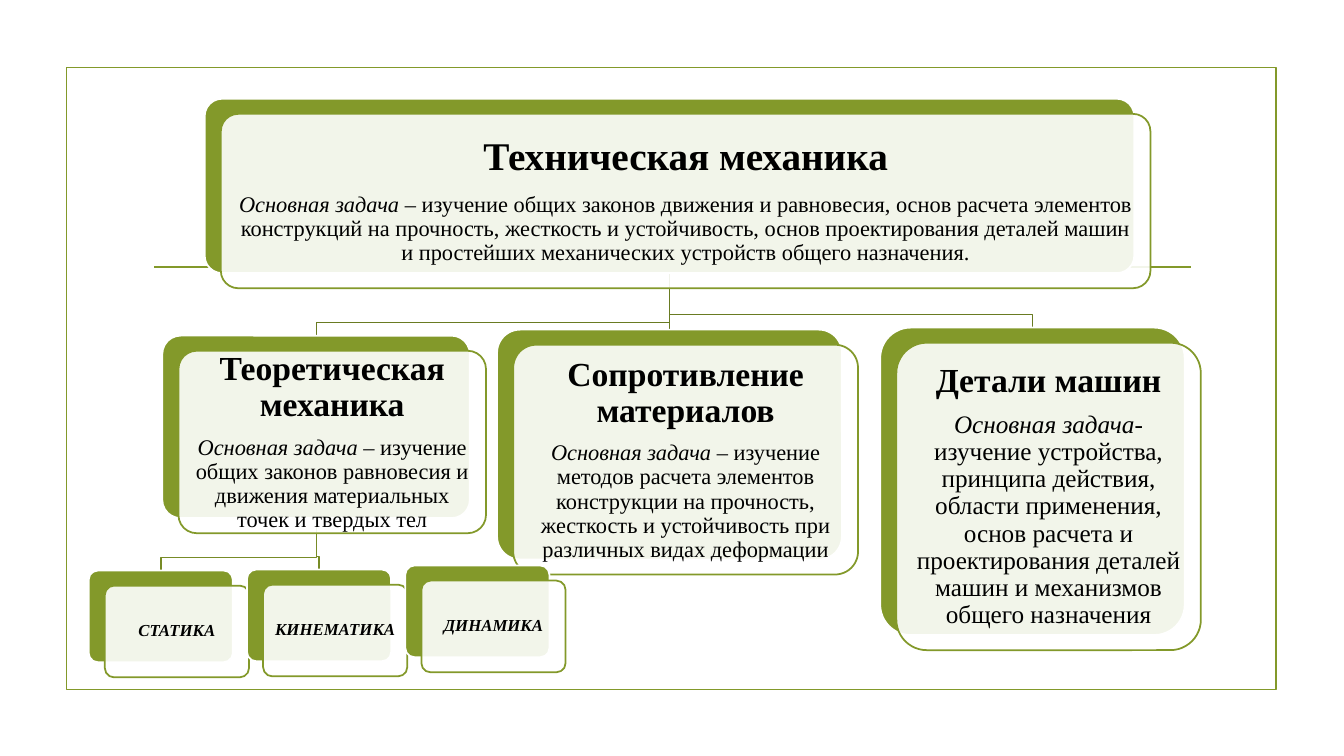
import pptx
import pptx.util
import pptx.dml.color
import pptx.enum.shapes
import pptx.enum.text
import pptx.oxml
import pptx.oxml.ns

PX = 9144  # 100 px to the inch
GREEN, WHITE, BLACK = "83992A", "FFFFFF", "000000"
FONT = "Times New Roman"
CORNER = 0.1
SHIFT_X, SHIFT_Y = 16, 15
BEND = 13
TASK = "Основная задача "

# box, inset, title size, title, task size, task lead, task text
COURSE = ((203, 98, 922, 173), 12, 28, "Техническая механика", 16, TASK,
          "– изучение общих законов движения и равновесия, основ расчета "
          "элементов конструкций на прочность, жесткость и устойчивость, основ "
          "проектирования деталей машин и простейших механических устройств "
          "общего назначения.")
THEORY = ((161, 333, 305, 181), 10, 24, "Теоретическая механика", 16, TASK,
          "– изучение общих законов равновесия и движения материальных точек "
          "и твердых тел")
STRENGTH = ((493, 327, 342, 228), 10, 24, "Сопротивление материалов", 16, TASK,
            "– изучение методов расчета элементов конструкции на прочность, "
            "жесткость и устойчивость при различных видах деформации")
PARTS = ((873, 325, 302, 305), 10, 24, "Детали машин", 18, "Основная задача- ",
         "изучение устройства, принципа действия, области применения, основ "
         "расчета и проектирования деталей машин и механизмов общего назначения")
STATICS = ((88, 566, 143, 91), "СТАТИКА")
KINEMATICS = ((245, 565, 143, 91), "КИНЕМАТИКА")
DYNAMICS = ((402, 561, 143, 91), "ДИНАМИКА")


def px(*lengths):
    return [pptx.util.Emu(round(n * PX)) for n in lengths]


def rgb(color):
    return pptx.dml.color.RGBColor.from_string(color)


def set_line(sp, color):
    sp.line.color.rgb = rgb(color)
    sp.line.width = pptx.util.Pt(1.25)


def add_box(slide, kind, box, line, fill=None):
    sp = slide.shapes.add_shape(kind, *px(*box))
    sp.shadow.inherit = False
    set_line(sp, line)
    if fill:
        sp.fill.solid()
        sp.fill.fore_color.rgb = rgb(fill)
    else:
        sp.fill.background()
    return sp


def add_rule(slide, x1, x2, y):
    line = slide.shapes.add_connector(
        pptx.enum.shapes.MSO_CONNECTOR.STRAIGHT, *px(x1, y, x2, y))
    set_line(line, GREEN)
    line._element.spPr.append(pptx.oxml.parse_xml(
        "<a:effectLst %s/>" % pptx.oxml.ns.nsdecls("a")))


def add_elbow(slide, parent, child, color):
    """Joins the bottom middle of one box to the top middle of another."""
    x1, y1 = parent[0] + parent[2] / 2, parent[1] + parent[3]
    x2, y2 = child[0] + child[2] / 2, child[1]
    builder = slide.shapes.build_freeform(x1, y1, scale=PX)
    builder.add_line_segments(
        [(x1, y2 - BEND), (x2, y2 - BEND), (x2, y2)], close=False)
    sp = builder.convert_to_shape()
    sp.shadow.inherit = False
    sp.fill.background()
    set_line(sp, color)


def add_card(slide, box, inset, paragraphs):
    """Green plate with a translucent front; paragraphs are (size, runs)."""
    x, y, w, h = box
    rounded = pptx.enum.shapes.MSO_SHAPE.ROUNDED_RECTANGLE
    back = add_box(slide, rounded, box, WHITE, GREEN)
    front = add_box(slide, rounded, (x + SHIFT_X, y + SHIFT_Y, w, h), GREEN, WHITE)
    for sp in (back, front):
        sp.adjustments[0] = CORNER
    color = front._element.spPr.find(".//" + pptx.oxml.ns.qn("a:srgbClr"))
    color.append(pptx.oxml.parse_xml(
        '<a:alpha %s val="90000"/>' % pptx.oxml.ns.nsdecls("a")))

    tf = front.text_frame
    tf.word_wrap = True
    tf.vertical_anchor = pptx.enum.text.MSO_ANCHOR.MIDDLE
    # the rounded corners already inset the text
    margin, = px(max(0, inset - 0.29 * CORNER * min(w, h)))
    tf.margin_left = tf.margin_right = tf.margin_top = tf.margin_bottom = margin
    for i, (size, runs) in enumerate(paragraphs):
        p = tf.add_paragraph() if i else tf.paragraphs[0]
        p.alignment = pptx.enum.text.PP_ALIGN.CENTER
        p.line_spacing = 0.9
        p.space_after = pptx.util.Pt(round(size * 0.35, 1))
        for text, bold, italic in runs:
            r = p.add_run()
            r.text = text
            r.font.name = FONT
            r.font.size = pptx.util.Pt(size)
            r.font.bold, r.font.italic = bold, italic
            r.font.color.rgb = rgb(BLACK)


def add_subject(slide, box, inset, title_size, title, task_size, lead, task):
    add_card(slide, box, inset, [
        (title_size, [(title, True, False)]),
        (task_size, [(lead, False, True), (task, False, False)])])


def add_topic(slide, box, name):
    add_card(slide, box, 5, [(12, [(name, True, True)])])


def add_hierarchy(slide):
    for child in (STRENGTH, PARTS, THEORY):
        add_elbow(slide, COURSE[0], child[0], "697B22")
    for child in (KINEMATICS, STATICS):
        add_elbow(slide, THEORY[0], child[0], "778B26")
    for subject in (COURSE, THEORY, PARTS, STRENGTH):
        add_subject(slide, *subject)
    for topic in (STATICS, KINEMATICS, DYNAMICS):
        add_topic(slide, *topic)


def main():
    prs = pptx.Presentation()
    prs.slide_width, prs.slide_height = px(1333, 750)
    slide = prs.slides.add_slide(prs.slide_layouts[6])
    add_box(slide, pptx.enum.shapes.MSO_SHAPE.RECTANGLE, (66, 67, 1200, 617), GREEN)
    add_rule(slide, 153, 1181, 265)
    add_hierarchy(slide)
    prs.save("out.pptx")


if __name__ == "__main__":
    main()
